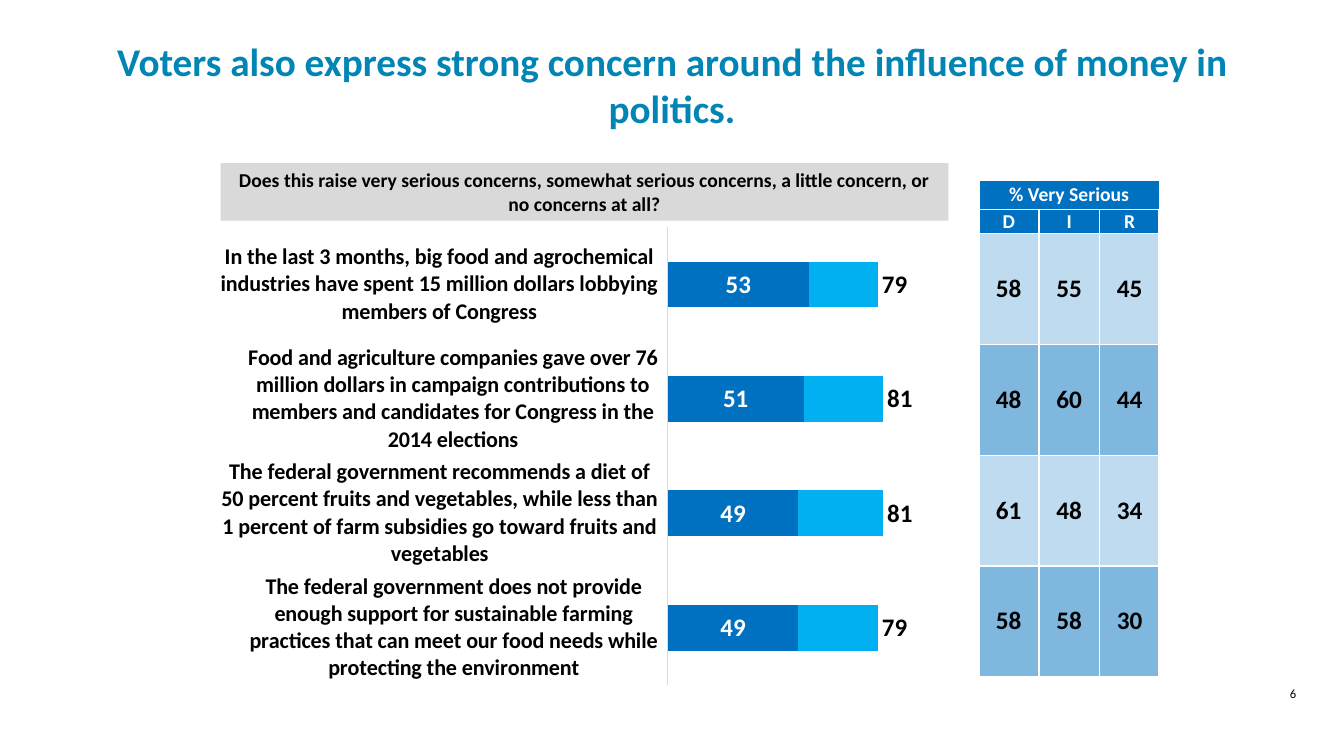
"""Build a slide on voter concern about money in politics."""
from typing import NamedTuple, Optional

from lxml import etree
from pptx import Presentation
from pptx.chart.data import CategoryChartData
from pptx.dml.color import RGBColor
from pptx.enum.chart import XL_CHART_TYPE, XL_LABEL_POSITION, XL_TICK_LABEL_POSITION, XL_TICK_MARK
from pptx.enum.shapes import MSO_SHAPE
from pptx.enum.text import MSO_ANCHOR, PP_ALIGN
from pptx.oxml import parse_xml
from pptx.oxml.ns import qn
from pptx.util import Cm, Pt

STACKED = XL_CHART_TYPE.BAR_STACKED
INNER = XL_LABEL_POSITION.INSIDE_BASE
MIDDLE = XL_LABEL_POSITION.CENTER
LOW = XL_TICK_LABEL_POSITION.LOW
NO_TICK = XL_TICK_MARK.NONE
RECT = MSO_SHAPE.RECTANGLE
CENTER = PP_ALIGN.CENTER
MID, TOP = MSO_ANCHOR.MIDDLE, MSO_ANCHOR.TOP
FONT = "Calibri"
BLUE, SKY, TEAL = "0070C0", "00B0F0", "0085B4"
WHITE, BLACK, GREY = "FFFFFF", "000000", "D9D9D9"


class Box(NamedTuple):
    """Place and size in centimetres."""
    left: float
    top: float
    width: float
    height: float


class Bar(NamedTuple):
    """One stacked series, with its label colour and place."""
    name: str
    vals: tuple
    fill: str
    ink: Optional[str] = None
    pos: Optional[XL_LABEL_POSITION] = None


class Row(NamedTuple):
    """One table row."""
    cells: tuple
    height: float
    alpha: int = 100
    size: int = 18
    ink: str = BLACK


TITLE = Box(2.51, 0.64, 28.85, 2.95)
PAGE = Box(31.32, 17.15, 2.54, 0.84)
CHART = Box(5.56, 5.49, 18.34, 12.01)
ASK = Box(5.56, 4.11, 18.34, 1.45)
TABLE = Box(24.66, 4.52, 4.57, 12.53)
PLOT = {"x": 0.61, "y": 0.02, "w": 0.37, "h": 0.96}

CLAIMS = (
    "The federal government does not provide enough support for sustainable farming "
    "practices that can meet our food needs while protecting the environment",
    "The federal government recommends a diet of 50 percent fruits and vegetables, "
    "while less than 1 percent of farm subsidies go toward fruits and vegetables",
    "Food and agriculture companies gave over 76 million dollars in campaign "
    "contributions to members and candidates for Congress in the 2014 elections",
    "In the last 3 months, big food and agrochemical industries have spent "
    "15 million dollars lobbying members of Congress",
)
BARS = (
    Bar("Series 1", (49, 49, 51, 53), BLUE, WHITE, MIDDLE),
    Bar("Series 2", (30, 32, 30, 26), SKY),
    Bar("Series 3", (79, 81, 81, 79), WHITE, BLACK, INNER),
)
ROWS = (
    Row(("% Very Serious", "", ""), 0.76, size=14, ink=WHITE),
    Row(("D", "I", "R"), 0.61, size=14, ink=WHITE),
    Row(("58", "55", "45"), 2.79, 25),
    Row(("48", "60", "44"), 2.79, 50),
    Row(("61", "48", "34"), 2.79, 25),
    Row(("58", "58", "30"), 2.79, 50),
)


def rgb(code: str) -> RGBColor:
    """Turn a hex string into a colour."""
    return RGBColor.from_string(code)


def place(box: Box) -> tuple:
    """Give a box as lengths."""
    return tuple(Cm(side) for side in box)


def style(font, size: float, color: str = BLACK, bold: bool = True) -> None:
    """Set face, size, colour and weight."""
    font.name, font.size, font.bold = FONT, Pt(size), bold
    font.color.rgb = rgb(color)


def write(frame, text: str, *, size: float, color: str = BLACK,
          bold: bool = True, anchor: MSO_ANCHOR = MID) -> None:
    """Put one centred paragraph in a frame."""
    frame.word_wrap = True
    frame.vertical_anchor = anchor
    para = frame.paragraphs[0]
    para.alignment = CENTER
    run = para.add_run()
    run.text = text
    style(run.font, size, color, bold)


def paint(fill, color: str) -> None:
    """Give a solid fill."""
    fill.solid()
    fill.fore_color.rgb = rgb(color)


def edge(cell, side: str, width: float) -> None:
    """Draw one white cell border."""
    props = cell._tc.get_or_add_tcPr()
    line = etree.SubElement(props, qn(f"a:ln{side}"), w=str(Pt(width)))
    solid = etree.SubElement(line, qn("a:solidFill"))
    etree.SubElement(solid, qn("a:srgbClr"), val=WHITE)


def fade(cell, alpha: int) -> None:
    """Make a cell fill partly clear."""
    tint = cell._tc.tcPr.find(qn("a:solidFill")).find(qn("a:srgbClr"))
    etree.SubElement(tint, qn("a:alpha"), val=str(alpha * 1000))


def fix_plot(chart) -> None:
    """Pin the inner plot area inside the chart."""
    area = chart.element.find(".//" + qn("c:plotArea"))
    for old in area.findall(qn("c:layout")):
        area.remove(old)
    modes = "".join(f'<c:{key}Mode val="edge"/>' for key in "xy")
    sides = "".join(f'<c:{key} val="{val}"/>' for key, val in PLOT.items())
    space = "http://schemas.openxmlformats.org/drawingml/2006/chart"
    area.insert(0, parse_xml(
        f'<c:layout xmlns:c="{space}"><c:manualLayout><c:layoutTarget val="inner"/>'
        f"{modes}{sides}</c:manualLayout></c:layout>"))


def add_bars(slide) -> None:
    """Add the stacked bar chart."""
    data = CategoryChartData()
    data.categories = CLAIMS
    for bar in BARS:
        data.add_series(bar.name, bar.vals)
    chart = slide.shapes.add_chart(STACKED, *place(CHART), data).chart
    style(chart.font, 10, bold=False)
    chart.has_legend = chart.has_title = False
    fix_plot(chart)
    plot = chart.plots[0]
    plot.gap_width, plot.overlap, plot.vary_by_categories = 150, 100, False
    for bar, series in zip(BARS, plot.series):
        paint(series.format.fill, bar.fill)
        if bar.ink:
            labels = series.data_labels
            labels.show_value, labels.position = True, bar.pos
            style(labels.font, 18, bar.ink)
    axis = chart.category_axis
    axis.major_tick_mark = axis.minor_tick_mark = NO_TICK
    axis.tick_label_position = LOW
    style(axis.tick_labels.font, 16)
    axis.format.line.color.rgb = rgb(GREY)
    axis.format.line.width = Pt(0.75)
    scale = chart.value_axis
    scale.minimum_scale, scale.maximum_scale = 0, 100
    scale.has_major_gridlines = scale.visible = False


def add_grid(slide) -> None:
    """Add the table of party shares."""
    count = len(ROWS[0].cells)
    table = slide.shapes.add_table(len(ROWS), count, *place(TABLE)).table
    table.first_row = table.horz_banding = False
    for col in table.columns:
        col.width = Cm(TABLE.width / count)
    for r, row in enumerate(ROWS):
        table.rows[r].height = Cm(row.height)
        for c, text in enumerate(row.cells):
            cell = table.cell(r, c)
            cell.margin_left = cell.margin_right = cell.margin_top = cell.margin_bottom = 0
            cell.vertical_anchor = MID
            outer = {"L": c == 0, "R": c == count - 1, "T": r == 0, "B": False}
            for side, wide in outer.items():
                edge(cell, side, 3 if wide else 1)
            paint(cell.fill, BLUE)
            if row.alpha < 100:
                fade(cell, row.alpha)
            if text:
                para = cell.text_frame.paragraphs[0]
                para.alignment = CENTER
                para.text = text
                style(para.runs[0].font, row.size, row.ink)
    table.cell(0, 0).merge(table.cell(0, count - 1))


def main() -> None:
    """Build and save the slide."""
    deck = Presentation()
    deck.slide_width, deck.slide_height = Cm(33.87), Cm(19.05)
    slide = deck.slides.add_slide(deck.slide_layouts[5])
    title = slide.shapes.title
    title.left, title.top, title.width, title.height = place(TITLE)
    write(title.text_frame, "Voters also express strong concern around the influence "
          "of money in politics.", size=28, color=TEAL)
    page = slide.shapes.add_textbox(*place(PAGE))
    write(page.text_frame, "6", size=9, bold=False, anchor=TOP)
    add_bars(slide)
    ask = slide.shapes.add_shape(RECT, *place(ASK))
    ask.shadow.inherit = False
    paint(ask.fill, GREY)
    ask.line.fill.background()
    write(ask.text_frame, "Does this raise very serious concerns, somewhat serious "
          "concerns, a little concern, or no concerns at all?", size=14)
    add_grid(slide)
    deck.save("out.pptx")


if __name__ == "__main__":
    main()
